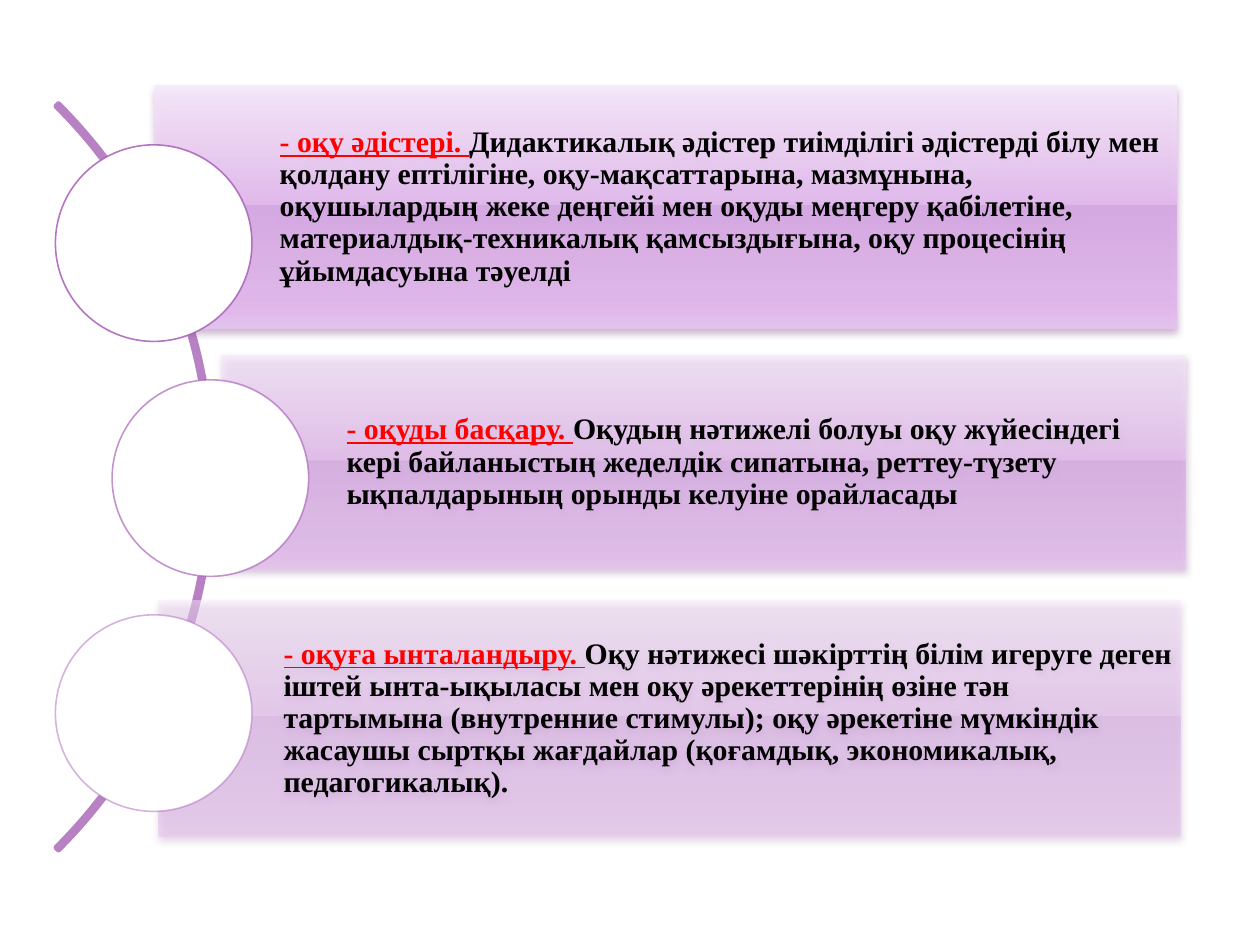
from dataclasses import dataclass

from pptx import Presentation
from pptx.dml.color import RGBColor
from pptx.enum.shapes import MSO_SHAPE
from pptx.enum.text import MSO_ANCHOR, PP_ALIGN
from pptx.oxml import parse_xml
from pptx.oxml.ns import nsdecls, qn
from pptx.util import Inches, Pt

ARC = MSO_SHAPE.BLOCK_ARC
RECT = MSO_SHAPE.RECTANGLE
OVAL = MSO_SHAPE.OVAL
MIDDLE = MSO_ANCHOR.MIDDLE
LEFT = PP_ALIGN.LEFT


@dataclass(frozen=True)
class Theme:
    font: str = "Times New Roman"
    size: float = 17
    head: str = "FF0000"
    body: str = "000000"
    disc: str = "FFFFFF"
    ring: str = "AC66BB"
    arc: str = "B781C3"
    shade: str = "6E307B"
    stops: tuple = ((0, "F7EBFB"), (49, "E2B9ED"), (49, "D5A7E2"),
                    (92, "E2B9ED"), (100, "E6C6EF"))


THEME = Theme()
DISC_SIZE = 1.56
DISC_TOP = 1.15
DISC_STEP = 1.865

ROWS = [
    ((1.23, 0.68, 8.11, 1.93), 0.44, 90, "- оқу əдістері. ",
     "Дидактикалық əдістер тиімділігі əдістерді білу мен қолдану ептілігіне, "
     "оқу-мақсаттарына, мазмұнына, оқушылардың жеке деңгейі мен оқуды меңгеру "
     "қабілетіне, материалдық-техникалық қамсыздығына, оқу процесінің "
     "ұйымдасуына тəуелді"),
    ((1.76, 2.82, 7.65, 1.7), 0.89, 70, "- оқуды басқару. ",
     "Оқудың нəтижелі болуы оқу жүйесіндегі кері байланыстың жеделдік сипатына, "
     "реттеу-түзету ықпалдарының орынды келуіне орайласады"),
    ((1.26, 4.77, 8.11, 1.87), 0.44, 50, "- оқуға ынталандыру. ",
     "Оқу нəтижесі шəкірттің білім игеруге деген іштей ынта-ықыласы мен оқу "
     "əрекеттерінің өзіне тəн тартымына (внутренние стимулы); оқу əрекетіне "
     "мүмкіндік жасаушы сыртқы жағдайлар (қоғамдық, экономикалық, "
     "педагогикалық)."),
]


def tint(color, alpha):
    return f'<a:srgbClr val="{color}"><a:alpha val="{alpha * 1000}"/></a:srgbClr>'


def add_shape(slide, kind, box):
    return slide.shapes.add_shape(kind, *(Inches(v) for v in box))


def set_line(shape, color, width):
    shape.line.color.rgb = RGBColor.from_string(color)
    shape.line.width = Pt(width)


def add_arc(slide):
    arc = add_shape(slide, ARC, (-6.68, -0.4, 8.37, 8.37))
    for i, value in enumerate((189, 27, 0.003)):
        arc.adjustments[i] = value
    arc.fill.background()
    set_line(arc, THEME.arc, 3.15)
    arc.shadow.inherit = False


def set_fade(shape, alpha):
    stops = "".join(f'<a:gs pos="{pos * 1000}">{tint(color, alpha)}</a:gs>'
                    for pos, color in THEME.stops)
    shape.element.spPr.append(parse_xml(
        f'<a:gradFill {nsdecls("a")} rotWithShape="1"><a:gsLst>{stops}</a:gsLst>'
        '<a:lin ang="5400000" scaled="0"/></a:gradFill>'))


def set_shade(shape):
    shape.shadow.inherit = False
    shape.element.spPr.find(qn("a:effectLst")).append(parse_xml(
        f'<a:outerShdw {nsdecls("a")} blurRad="{Pt(4)}" dist="{Pt(2)}" '
        f'dir="5400000" rotWithShape="0">{tint(THEME.shade, 38)}</a:outerShdw>'))


def add_run(para, text, color, line):
    run = para.add_run()
    run.text = text
    font = run.font
    font.name = THEME.font
    font.size = Pt(THEME.size)
    font.bold = True
    font.underline = line
    font.color.rgb = RGBColor.from_string(color)


def add_panel(slide, box, alpha, head, body):
    panel = add_shape(slide, RECT, box)
    set_fade(panel, alpha)
    panel.line.fill.background()
    set_shade(panel)
    frame = panel.text_frame
    frame.word_wrap = True
    frame.vertical_anchor = MIDDLE
    frame.margin_left = Inches(0.99)
    frame.margin_top = frame.margin_right = frame.margin_bottom = Inches(0.05)
    para = frame.paragraphs[0]
    para.alignment = LEFT
    para.line_spacing = 0.9
    add_run(para, head, THEME.head, True)
    add_run(para, body, THEME.body, False)


def add_disc(slide, left, top, alpha):
    disc = add_shape(slide, OVAL, (left, top, DISC_SIZE, DISC_SIZE))
    disc.fill.solid()
    disc.fill.fore_color.rgb = RGBColor.from_string(THEME.disc)
    set_line(disc, THEME.ring, 0.9)
    color = disc.element.spPr.find(qn("a:ln")).find(".//" + qn("a:srgbClr"))
    color.append(parse_xml(f'<a:alpha {nsdecls("a")} val="{alpha * 1000}"/>'))
    disc.shadow.inherit = False


def main():
    deck = Presentation()
    deck.slide_width = Inches(10)
    deck.slide_height = Inches(7.5)
    slide = deck.slides.add_slide(deck.slide_layouts[6])
    add_arc(slide)
    for i, (box, left, alpha, head, body) in enumerate(ROWS):
        add_panel(slide, box, alpha, head, body)
        add_disc(slide, left, DISC_TOP + i * DISC_STEP, alpha)
    deck.save("out.pptx")


if __name__ == "__main__":
    main()
